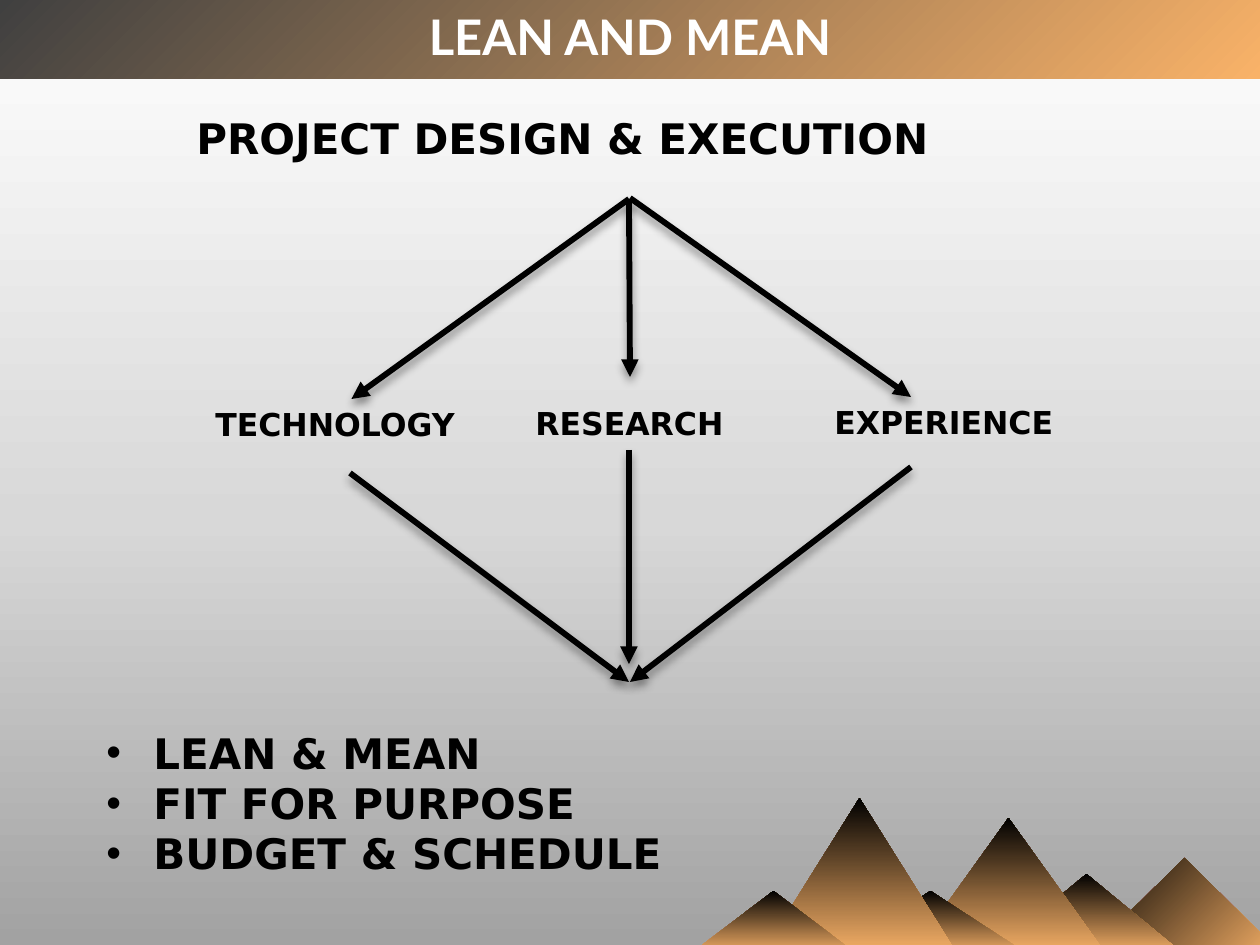
from pptx import Presentation
from pptx import util as u
from pptx.dml.color import RGBColor
from pptx.enum import shapes, text
from pptx.oxml import parse_xml
from pptx.oxml.ns import nsdecls, qn

PX_PER_INCH = 126
BLACK = RGBColor(0x00, 0x00, 0x00)
WHITE = RGBColor(0xFF, 0xFF, 0xFF)
ORANGE = RGBColor(0xF9, 0xB2, 0x68)
CHARCOAL = RGBColor(0x40, 0x40, 0x40)
GREY = RGBColor(0xA2, 0xA2, 0xA2)
LIGHT_GREY = RGBColor(0xD8, 0xD8, 0xD8)

BODY_FONT = "DejaVu Sans"
UPWARD = '<a:lin ang="16200000" scaled="0"/>'
UP_LEFT = '<a:lin ang="13500000" scaled="0"/>'
FROM_CORNER = '<a:path path="circle"><a:fillToRect l="100000" t="100000"/></a:path>'

# left, top, width, height, gradient direction; back to front
MOUNTAINS = [
    (1086, 858, 197, 97, UP_LEFT),
    (988, 874, 197, 81, UPWARD),
    (910, 818, 197, 137, UPWARD),
    (832, 891, 197, 64, UPWARD),
    (761, 798, 197, 157, UPWARD),
    (689, 891, 169, 64, UPWARD),
]
# label, left, top, width
PILLARS = [
    ("TECHNOLOGY", 203, 399, 297),
    ("RESEARCH", 523, 398, 324),
    ("EXPERIENCE", 822, 397, 326),
]
# start and end points
ARROWS = [
    ((630, 198), (911, 397)),
    ((629, 199), (630, 377)),
    ((350, 473), (629, 682)),
    ((911, 467), (630, 682)),
    ((629, 450), (629, 664)),
]
GOALS = ["LEAN & MEAN", "FIT FOR PURPOSE", "BUDGET & SCHEDULE"]


def px(*lengths):
    return [u.Emu(round(length * 914400 / PX_PER_INCH)) for length in lengths]


def set_gradient(fill, element, stops, direction):
    """Fill with (percent, colour) stops along the given direction."""
    fill.gradient()
    marks = "".join(
        f'<a:gs pos="{percent * 1000}"><a:srgbClr val="{colour}"/></a:gs>'
        for percent, colour in stops
    )
    gradient = parse_xml(
        f'<a:gradFill {nsdecls("a")} rotWithShape="1">'
        f"<a:gsLst>{marks}</a:gsLst>{direction}</a:gradFill>"
    )
    default = element.find(".//" + qn("a:gradFill"))
    default.getparent().replace(default, gradient)


def add_gradient_shape(page, kind, frame, stops, direction):
    shape = page.shapes.add_shape(kind, *px(*frame))
    shape.shadow.inherit = False
    shape.line.fill.background()
    set_gradient(shape.fill, shape._element, stops, direction)
    return shape


def add_text(page, lines, frame, size, font=BODY_FONT, colour=BLACK,
             align=text.PP_ALIGN.LEFT, indent=0, bullet=False):
    box = page.shapes.add_textbox(*px(*frame))
    box.text_frame.word_wrap = True
    box.text_frame.auto_size = text.MSO_AUTO_SIZE.SHAPE_TO_FIT_TEXT
    for number, line in enumerate(lines):
        para = box.text_frame.paragraphs[0] if number == 0 else box.text_frame.add_paragraph()
        para.alignment = align
        span = para.add_run()
        span.text = line
        span.font.name = font
        span.font.size = u.Pt(size)
        span.font.bold = True
        span.font.color.rgb = colour
        if indent:
            properties = para._p.get_or_add_pPr()
            margin = px(indent)[0]
            properties.set("marL", str(margin))
            if bullet:
                properties.set("indent", str(-margin))
                properties.append(parse_xml(f'<a:buFont {nsdecls("a")} typeface="Arial"/>'))
                properties.append(parse_xml(f'<a:buChar {nsdecls("a")} char="•"/>'))
    return box


def add_arrow(page, start, end):
    arrow = page.shapes.add_connector(shapes.MSO_CONNECTOR.STRAIGHT, *px(*start, *end))
    arrow.line.color.rgb = BLACK
    arrow.line.width = u.Pt(3.35)
    arrow.line._get_or_add_ln().append(
        parse_xml(f'<a:tailEnd {nsdecls("a")} type="triangle"/>'))
    arrow._element.spPr.append(parse_xml(
        f'<a:effectLst {nsdecls("a")}>'
        f'<a:outerShdw blurRad="{u.Pt(5.2)}" dist="{u.Pt(3)}" dir="5400000" rotWithShape="0">'
        f'<a:srgbClr val="{BLACK}"><a:alpha val="40000"/></a:srgbClr>'
        "</a:outerShdw></a:effectLst>"
    ))
    return arrow


def main():
    deck = Presentation()
    deck.slide_width, deck.slide_height = px(1260, 945)
    page = deck.slides.add_slide(deck.slide_layouts[6])

    # Background, mountains and header band
    set_gradient(page.background.fill, page._element,
                 [(0, GREY), (45, LIGHT_GREY), (100, WHITE)], UPWARD)
    for *frame, direction in MOUNTAINS:
        add_gradient_shape(page, shapes.MSO_SHAPE.ISOSCELES_TRIANGLE, frame,
                           [(0, ORANGE), (100, BLACK)], direction)
    add_gradient_shape(page, shapes.MSO_SHAPE.RECTANGLE, (0, 0, 1260, 79),
                       [(0, ORANGE), (100, CHARCOAL)], FROM_CORNER)

    # Headings
    add_text(page, ["LEAN AND MEAN"], (0, 0, 1260, 72), 28, font="Lato",
             colour=WHITE, align=text.PP_ALIGN.CENTER)
    add_text(page, ["PROJECT DESIGN & EXECUTION"], (94, 106, 908, 63), 24, indent=90)

    # Three pillars and the arrows around them
    pillars = {
        label: add_text(page, [label], (left, top, width, 50), 18)
        for label, left, top, width in PILLARS
    }
    for start, end in ARROWS:
        add_arrow(page, start, end)
    add_arrow(page, (629, 199), (352, 399)).end_connect(pillars["TECHNOLOGY"], 0)

    # Goals
    add_text(page, GOALS, (94, 721, 635, 165), 24, indent=47, bullet=True)

    deck.save("out.pptx")


if __name__ == "__main__":
    main()
